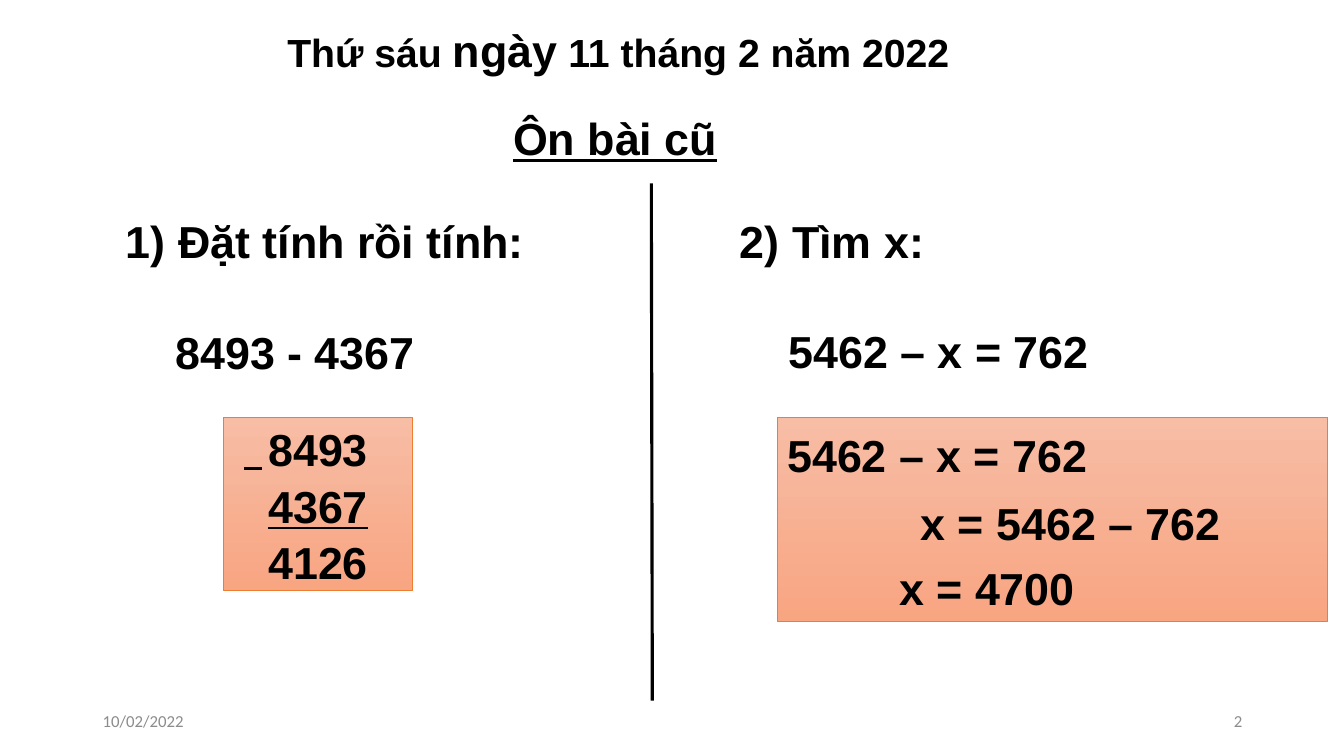
from lxml.etree import SubElement
from pptx import Presentation
from pptx.dml.color import RGBColor
from pptx.enum.shapes import MSO_CONNECTOR, MSO_SHAPE
from pptx.enum.text import MSO_ANCHOR as ANCHOR, MSO_AUTO_SIZE, PP_ALIGN as ALIGN
from pptx.oxml.ns import qn
from pptx.util import Inches, Pt

BLACK = RGBColor(0x00, 0x00, 0x00)
GRAY = RGBColor(0x8C, 0x8C, 0x8C)
ORANGE = RGBColor(0xED, 0x7D, 0x31)
PEACH_TOP = RGBColor(0xF7, 0xBD, 0xA5)
PEACH_BOTTOM = RGBColor(0xF8, 0xA5, 0x82)

DATE_HEADING = [("Thứ sáu ", 28), ("ngày", 32), (" 11 tháng 2 năm 2022", 28)]
TEXTS = [
    ("Ôn bài cũ", (4.99, 1.05, 2.72, 0.64), dict(underline=True)),
    ("1) Đặt tính rồi tính:", (1.15, 2.07, 4.68, 0.64), {}),
    ("8493 - 4367", (1.64, 3.17, 3.74, 0.64), {}),
    ("2) Tìm x:", (7.24, 2.07, 4.35, 0.64), {}),
    ("5462 – x = 762", (7.5, 3.13, 4.86, 0.68),
     dict(indent=0.22, line_spacing=1.07, after=8)),
]
FOOTERS = [
    ("10/02/2022", (0.92, 6.95, 3, 0.4), ALIGN.LEFT),
    ("2", (9.42, 6.95, 3, 0.4), ALIGN.RIGHT),
]
SUBTRACTION = [
    ("8493", {}),
    ("4367", dict(underline=True)),
    ("4126", {}),
]
SOLUTION = [
    ("5462 – x = 762", dict(line_spacing=1.07, after=8)),
    ("x = 5462 – 762", dict(indent=1.32, line_spacing=1.07, after=8)),
    ("x = 4700", dict(indent=1.11)),
]
LINES = [((6.46, 1.82), (6.47, 6.95)), ((2.42, 4.65), (2.6, 4.65))]


def write(p, text, size=32, bold=True, underline=False, font="Arial", color=BLACK,
          align=ALIGN.LEFT, indent=0, line_spacing=None, after=0):
    p.alignment = align
    p.space_before = Pt(0)
    p.space_after = Pt(after)
    if line_spacing:
        p.line_spacing = line_spacing
    if indent:
        p._p.get_or_add_pPr().set("marL", str(Inches(indent)))
    r = p.add_run()
    r.text = text
    r.font.size = Pt(size)
    r.font.name = font
    r.font.bold = bold
    r.font.underline = underline
    r.font.color.rgb = color


def place(sp, box):
    sp.left, sp.top, sp.width, sp.height = map(Inches, box)


def prepare(sp, anchor=ANCHOR.TOP):
    tf = sp.text_frame
    tf.word_wrap = True
    tf.auto_size = MSO_AUTO_SIZE.NONE
    tf.vertical_anchor = anchor
    return tf


def add_text(s, text, box, anchor=ANCHOR.TOP, **style):
    tf = prepare(s.shapes.add_textbox(*map(Inches, box)), anchor)
    write(tf.paragraphs[0], text, **style)


def add_answer(s, rows, box, align=ALIGN.LEFT):
    sp = s.shapes.add_shape(MSO_SHAPE.RECTANGLE, *map(Inches, box))
    sp.shadow.inherit = False
    sp.fill.gradient()
    sp.fill.gradient_angle = 270
    for stop, color in zip(sp.fill.gradient_stops, (PEACH_TOP, PEACH_BOTTOM)):
        stop.color.rgb = color
    sp.line.color.rgb = ORANGE
    sp.line.width = Pt(0.5)
    tf = prepare(sp, ANCHOR.MIDDLE)
    for i, (text, style) in enumerate(rows):
        p = tf.add_paragraph() if i else tf.paragraphs[0]
        write(p, text, align=align, **style)


def add_line(s, start, end):
    line = s.shapes.add_connector(MSO_CONNECTOR.STRAIGHT, *map(Inches, start + end))
    line.line.color.rgb = BLACK
    line.line.width = Pt(2.25)
    SubElement(line._element.spPr, qn("a:effectLst"))


def main():
    prs = Presentation()
    prs.slide_width, prs.slide_height = Inches(13.33), Inches(7.5)
    s = prs.slides.add_slide(prs.slide_layouts[5])

    title = s.shapes.title
    place(title, (2.75, 0.18, 8.26, 0.64))
    tf = prepare(title)
    for text, size in DATE_HEADING:
        write(tf.paragraphs[0], text, size=size)

    for text, box, style in TEXTS:
        add_text(s, text, box, **style)
    for text, box, align in FOOTERS:
        add_text(s, text, box, ANCHOR.MIDDLE, size=12, bold=False,
                 font="Calibri", color=GRAY, align=align)

    add_answer(s, [(text, dict(style, line_spacing=1.05)) for text, style in SUBTRACTION],
               (2.22, 4.14, 1.87, 1.72), ALIGN.CENTER)
    add_answer(s, SOLUTION, (7.71, 4.14, 5.46, 2.02))
    for start, end in LINES:
        add_line(s, start, end)

    prs.save("out.pptx")


if __name__ == "__main__":
    main()
